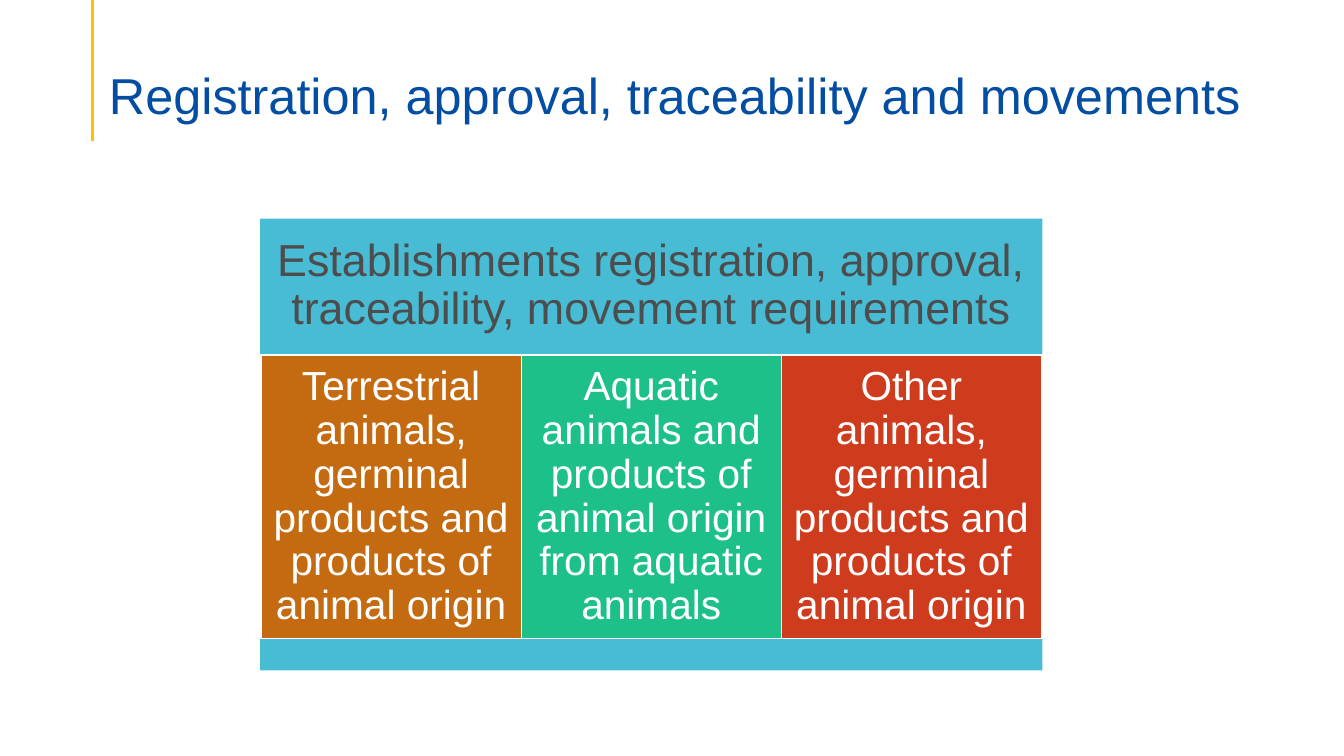
import pptx
import pptx.util
import pptx.dml.color
import pptx.enum.shapes
import pptx.enum.text
import pptx.oxml.ns
import lxml.etree

Inches = pptx.util.Inches
Pt = pptx.util.Pt
ALIGN = pptx.enum.text.PP_ALIGN
ANCHOR = pptx.enum.text.MSO_ANCHOR

COLOURS = {
    "title": "034EA2", "accent": "FFC000", "band": "48BCD4", "dark": "4D4D4D",
    "white": "FFFFFF", "orange": "C46A11", "green": "1EC08A", "red": "CF3B1D",
}
TITLE = "Registration, approval, traceability and movements"
HEADING = "Establishments registration, approval, traceability, movement requirements"
COLUMNS = [
    ("Terrestrial animals, germinal products and products of animal origin", "orange"),
    ("Aquatic animals and products of animal origin from aquatic animals", "green"),
    ("Other animals, germinal products and products of animal origin", "red"),
]

BAND_LEFT, BAND_WIDTH = 2.58, 7.76
BAND_TOP, BAND_HEIGHT = 2.17, 1.34
COLUMN_LEFT, COLUMN_WIDTH = 2.59, 2.58
COLUMN_TOP, COLUMN_HEIGHT = 3.52, 2.82
FOOT_HEIGHT = 0.31


def rgb(name):
    return pptx.dml.color.RGBColor.from_string(COLOURS[name])


def write(shape, text, size, colour, align, anchor, insets):
    """Fill the shape with one paragraph; insets are left, top, right, bottom."""
    frame = shape.text_frame
    frame.word_wrap = True
    frame.auto_size = pptx.enum.text.MSO_AUTO_SIZE.NONE
    frame.vertical_anchor = anchor
    (frame.margin_left, frame.margin_top,
     frame.margin_right, frame.margin_bottom) = map(Inches, insets)
    para = frame.paragraphs[0]
    para.alignment = align
    para.line_spacing = 0.9
    para.space_before = Pt(0)
    span = para.add_run()
    span.text = text
    span.font.name = "Arial"
    span.font.size = Pt(size)
    span.font.color.rgb = rgb(colour)


def add_block(page, left, top, width, height, fill, outline=None):
    block = page.shapes.add_shape(
        pptx.enum.shapes.MSO_SHAPE.RECTANGLE,
        Inches(left), Inches(top), Inches(width), Inches(height))
    block.shadow.inherit = False
    block.fill.solid()
    block.fill.fore_color.rgb = rgb(fill)
    if outline:
        block.line.color.rgb = rgb(outline)
        block.line.width = Pt(1)
    else:
        block.line.fill.background()
    return block


def add_accent_line(page):
    line = page.shapes.add_connector(
        pptx.enum.shapes.MSO_CONNECTOR.STRAIGHT,
        Inches(0.92), Inches(0), Inches(0.92), Inches(1.4))
    line.line.color.rgb = rgb("accent")
    line.line.width = Pt(2.25)
    lxml.etree.SubElement(line._element.spPr, pptx.oxml.ns.qn("a:effectLst"))


def main():
    deck = pptx.Presentation()
    deck.slide_width, deck.slide_height = Inches(13.33), Inches(7.5)
    page = deck.slides.add_slide(deck.slide_layouts.get_by_name("Title Only"))

    title = page.shapes.title
    title.left, title.top = Inches(0.98), Inches(0.38)
    title.width, title.height = Inches(11.5), Inches(0.86)
    write(title, TITLE, 36, "title", ALIGN.LEFT, ANCHOR.BOTTOM, (0.1, 0.05, 0.1, 0))
    add_accent_line(page)

    heading = add_block(page, BAND_LEFT, BAND_TOP, BAND_WIDTH, BAND_HEIGHT, "band")
    write(heading, HEADING, 32, "dark", ALIGN.CENTER, ANCHOR.MIDDLE, (0.13,) * 4)
    for index, (text, fill) in enumerate(COLUMNS):
        column = add_block(page, COLUMN_LEFT + index * COLUMN_WIDTH, COLUMN_TOP,
                           COLUMN_WIDTH, COLUMN_HEIGHT, fill, "white")
        write(column, text, 29, "white", ALIGN.CENTER, ANCHOR.MIDDLE, (0.12,) * 4)
    add_block(page, BAND_LEFT, COLUMN_TOP + COLUMN_HEIGHT, BAND_WIDTH, FOOT_HEIGHT, "band")

    deck.save("out.pptx")


if __name__ == "__main__":
    main()
